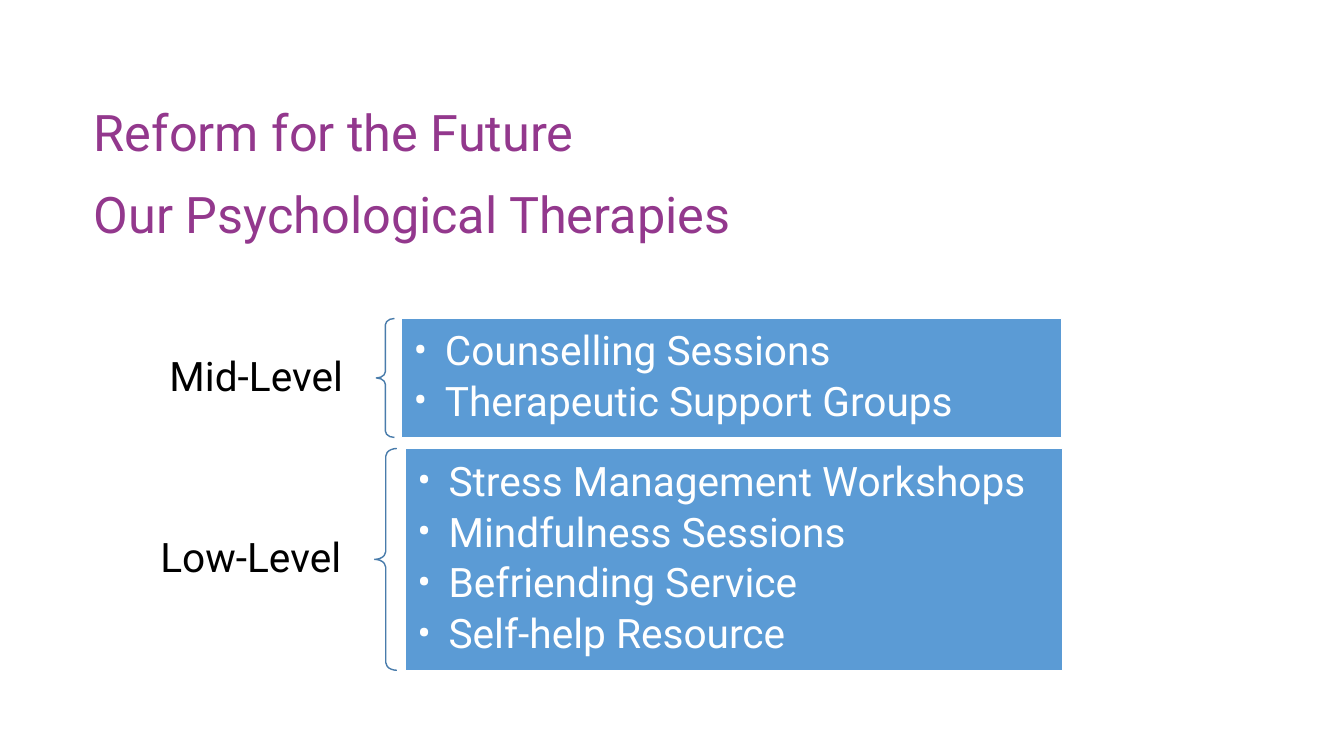
from dataclasses import dataclass

from lxml import etree
from pptx import Presentation
from pptx import util as u
from pptx.dml.color import RGBColor
from pptx.enum import shapes, text
from pptx.oxml import ns

COLUMNS, ROWS = 160, 90
FONT = "Roboto"
PURPLE, BLUE, BRACE_BLUE = "93388D", "5B9BD5", "497CAB"
BLACK, WHITE = "000000", "FFFFFF"
TITLE_SIZE, BODY_SIZE = 36, 29
LABEL_LEFT, LABEL_HEIGHT = 2.2, 7.6
INDENT = u.Inches(0.31)

prs = Presentation()
prs.slide_width, prs.slide_height = u.Inches(13.33), u.Inches(7.5)
slide = prs.slides.add_slide(prs.slide_layouts[6])


@dataclass
class Box:
    """A place on the slide, in grid columns and rows."""
    left: float
    top: float
    width: float
    height: float

    def emu(self) -> list[int]:
        column, row = prs.slide_width / COLUMNS, prs.slide_height / ROWS
        return [round(self.left * column), round(self.top * row),
                round(self.width * column), round(self.height * row)]


@dataclass
class Tier:
    label: str
    therapies: list[str]
    brace: Box
    panel_left: float
    panel_width: float


TITLES = [
    ("Reform for the Future", Box(10, 11.4, 113.9, 8.5), 1.0, text.MSO_ANCHOR.TOP),
    ("Our Psychological Therapies", Box(10, 19.8, 113.9, 9.84), 0.9, text.MSO_ANCHOR.BOTTOM),
]
TIERS = [
    Tier("Mid-Level", ["Counselling Sessions", "Therapeutic Support Groups"],
         Box(44.8, 37.92, 2.16, 14.16), 47.8, 78.6),
    Tier("Low-Level", ["Stress Management Workshops", "Mindfulness Sessions",
                       "Befriending Service", "Self-help Resource"],
         Box(44.6, 53.4, 2.64, 26.4), 48.25, 78.25),
]


def rgb(color: str) -> RGBColor:
    return RGBColor.from_string(color)


def set_insets(tf, left: float, top: float, right: float, bottom: float) -> None:
    tf.margin_left, tf.margin_top = u.Inches(left), u.Inches(top)
    tf.margin_right, tf.margin_bottom = u.Inches(right), u.Inches(bottom)


def add_run(p, words: str, size: float, color: str) -> None:
    r = p.add_run()
    r.text = words
    r.font.name, r.font.size = FONT, u.Pt(size)
    r.font.color.rgb = rgb(color)


def add_line_of_text(words: str, box: Box, size: float, color: str, spacing: float, anchor):
    """Add a one-paragraph text box and return its text frame."""
    tf = slide.shapes.add_textbox(*box.emu()).text_frame
    tf.word_wrap, tf.vertical_anchor = True, anchor
    p = tf.paragraphs[0]
    p.line_spacing = spacing
    add_run(p, words, size, color)
    return tf


def add_outlined(kind, box: Box, line: str):
    sp = slide.shapes.add_shape(kind, *box.emu())
    sp.shadow.inherit = False
    sp.line.color.rgb, sp.line.width = rgb(line), u.Pt(1)
    return sp


def add_bullet(p) -> None:
    pPr = p._p.get_or_add_pPr()
    pPr.set("marL", str(INDENT))
    pPr.set("indent", str(-INDENT))
    etree.SubElement(pPr, ns.qn("a:buFont")).set("typeface", FONT)
    etree.SubElement(pPr, ns.qn("a:buChar")).set("char", "•")


def add_panel(box: Box, therapies: list[str]) -> None:
    sp = add_outlined(shapes.MSO_SHAPE.RECTANGLE, box, WHITE)
    sp.fill.solid()
    sp.fill.fore_color.rgb = rgb(BLUE)
    tf = sp.text_frame
    tf.word_wrap, tf.vertical_anchor = True, text.MSO_ANCHOR.MIDDLE
    set_insets(tf, 0.12, 0.12, 0.12, 0.12)
    for i, therapy in enumerate(therapies):
        p = tf.add_paragraph() if i else tf.paragraphs[0]
        add_bullet(p)
        p.alignment, p.line_spacing = text.PP_ALIGN.LEFT, 0.9
        if i:
            p.space_before = u.Pt(5)
        add_run(p, therapy, BODY_SIZE, WHITE)


def add_tier(tier: Tier) -> None:
    brace = tier.brace
    middle = brace.top + brace.height / 2
    label = Box(LABEL_LEFT, middle - LABEL_HEIGHT / 2, brace.left - LABEL_LEFT, LABEL_HEIGHT)
    tf = add_line_of_text(tier.label, label, BODY_SIZE, BLACK, 0.9, text.MSO_ANCHOR.MIDDLE)
    set_insets(tf, 0.23, 0.08, 0.33, 0.08)
    tf.paragraphs[0].alignment = text.PP_ALIGN.RIGHT

    sp = add_outlined(shapes.MSO_SHAPE.LEFT_BRACE, brace, BRACE_BLUE)
    sp.fill.background()
    sp.adjustments[0], sp.adjustments[1] = 0.35, 0.5

    add_panel(Box(tier.panel_left, brace.top, tier.panel_width, brace.height), tier.therapies)


for words, box, spacing, anchor in TITLES:
    add_line_of_text(words, box, TITLE_SIZE, PURPLE, spacing, anchor)
for tier in TIERS:
    add_tier(tier)
prs.save("out.pptx")
